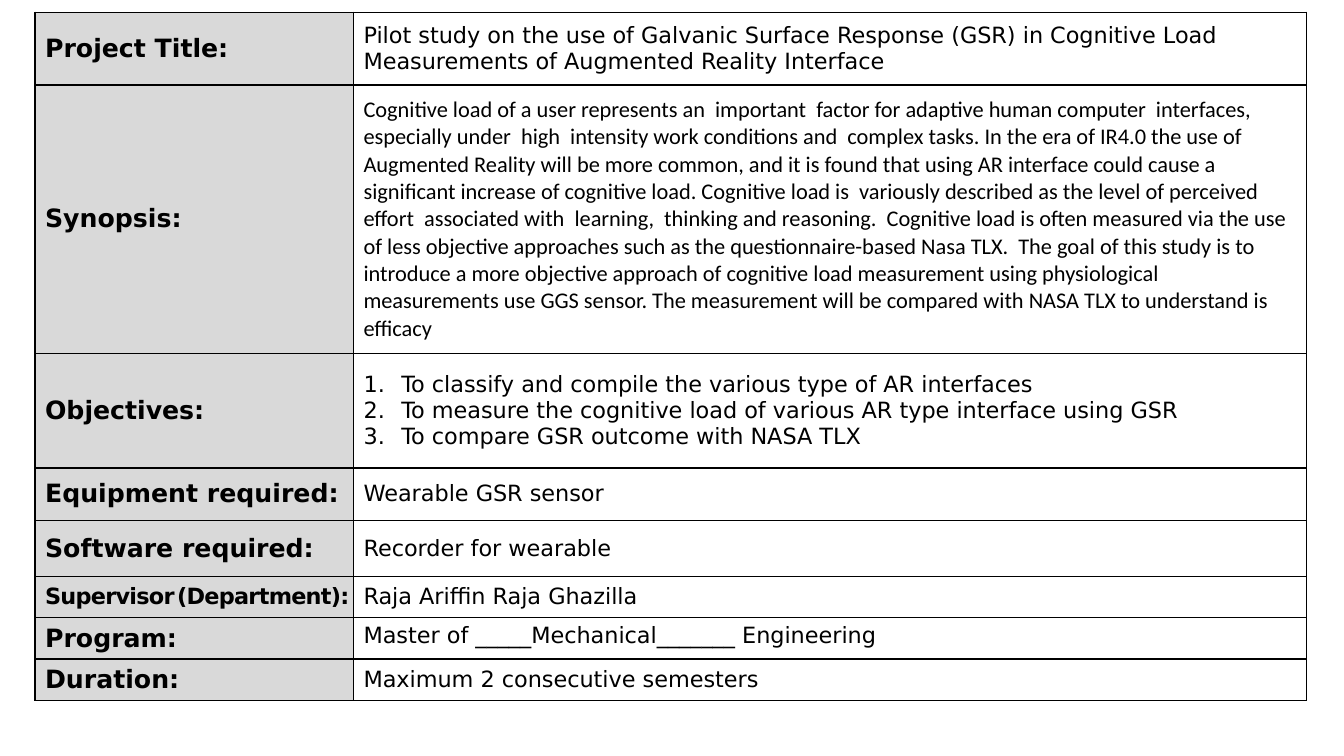
from dataclasses import dataclass

from lxml.etree import SubElement
from pptx import Presentation
from pptx.dml.color import RGBColor
from pptx.enum.text import MSO_ANCHOR
from pptx.oxml.ns import qn
from pptx.table import _Cell
from pptx.text.text import _Paragraph
from pptx.util import Pt

BLACK, GREY = "000000", "D9D9D9"
LABEL_WIDTH, DETAIL_WIDTH = 227.5, 681
INDENT = 27


@dataclass
class Field:
    label: str
    lines: list[str]
    height: float
    font: str = "DejaVu Sans"
    numbered: bool = False
    anchor: MSO_ANCHOR = MSO_ANCHOR.MIDDLE


SYNOPSIS = (
    "Cognitive load of a user represents an  important  factor for adaptive human computer  interfaces,  "
    "especially under  high  intensity work conditions and  complex tasks. In the era of IR4.0 the use of "
    "Augmented Reality will be more common, and it is found that using AR interface could cause a "
    "significant increase of cognitive load. Cognitive load is  variously described as the level of perceived  "
    "effort  associated with  learning,  thinking and reasoning.  Cognitive load is often measured via the use "
    "of less objective approaches such as the questionnaire-based Nasa TLX.  The goal of this study is to "
    "introduce a more objective approach of cognitive load measurement using physiological "
    "measurements use GGS sensor. The measurement will be compared with NASA TLX to understand is efficacy"
)

SUPERVISOR = "Supervisor (Department):"

FIELDS = [
    Field("Project Title:", [
        "Pilot study on the use of Galvanic Surface Response (GSR) in Cognitive Load "
        " Measurements of Augmented Reality Interface"], 52),
    Field("Synopsis:", [SYNOPSIS], 191.5, font="Calibri"),
    Field("Objectives:", [
        "To classify and compile the various type of AR interfaces",
        "To measure the cognitive load of various AR type interface using GSR",
        "To compare GSR outcome with NASA TLX"], 82, numbered=True),
    Field("Equipment required:", ["Wearable GSR sensor"], 37.5),
    Field("Software required:", ["Recorder for wearable"], 40),
    Field(SUPERVISOR, ["Raja Ariffin Raja Ghazilla"], 29.5),
    Field("Program:", ["Master of _____Mechanical_______ Engineering"], 29.5,
          anchor=MSO_ANCHOR.TOP),
    Field("Duration:", ["Maximum 2 consecutive semesters"], 29.5),
]


def rgb(color: str) -> RGBColor:
    return RGBColor.from_string(color)


def add_borders(cell: _Cell) -> None:
    """Outline the cell; call before filling, as lines precede the fill."""
    tcPr = cell._tc.get_or_add_tcPr()
    for side in ("a:lnL", "a:lnR", "a:lnT", "a:lnB"):
        ln = SubElement(tcPr, qn(side), w=str(Pt(1)))
        fill = SubElement(ln, qn("a:solidFill"))
        SubElement(fill, qn("a:srgbClr"), val=BLACK)


def set_font(p: _Paragraph, name: str, size: float, bold: bool = False) -> None:
    p.font.name = name
    p.font.size = Pt(size)
    p.font.bold = bold
    p.font.color.rgb = rgb(BLACK)


def number(p: _Paragraph) -> None:
    pPr = p._p.get_or_add_pPr()
    pPr.set("marL", str(Pt(INDENT)))
    pPr.set("indent", str(-Pt(INDENT)))
    bullet = pPr.makeelement(qn("a:buAutoNum"), {"type": "arabicPeriod"})
    pPr.insert(0, bullet)


def write_tight_label(cell: _Cell, text: str) -> None:
    """Fit a long label on one line with condensed runs and a narrow gap."""
    cell.margin_right = 0
    p = cell.text_frame.paragraphs[0]
    set_font(p, "DejaVu Sans", 16, bold=True)
    first, gap, last = text.partition(" ")
    for part in (first, gap, last):
        r = p.add_run()
        r.text = part
        r._r.get_or_add_rPr().set("spc", "-50")
        if part == gap:
            r.font.size = Pt(5)


def write_label(cell: _Cell, text: str) -> None:
    cell.vertical_anchor = MSO_ANCHOR.MIDDLE
    cell.fill.solid()
    cell.fill.fore_color.rgb = rgb(GREY)
    if text == SUPERVISOR:
        write_tight_label(cell, text)
    else:
        cell.text = text
        set_font(cell.text_frame.paragraphs[0], "DejaVu Sans", 18, bold=True)


def write_detail(cell: _Cell, field: Field) -> None:
    cell.vertical_anchor = field.anchor
    cell.fill.background()
    cell.text = "\n".join(field.lines)
    for p in cell.text_frame.paragraphs:
        set_font(p, field.font, 16)
        if field.numbered:
            number(p)


def main() -> None:
    prs = Presentation()
    prs.slide_width, prs.slide_height = Pt(960), Pt(540)
    s = prs.slides.add_slide(prs.slide_layouts[6])
    table = s.shapes.add_table(
        len(FIELDS), 2, Pt(25), Pt(8.8), Pt(LABEL_WIDTH + DETAIL_WIDTH),
        Pt(sum(field.height for field in FIELDS))).table
    table.first_row = table.horz_banding = False
    for column, width in zip(table.columns, (LABEL_WIDTH, DETAIL_WIDTH)):
        column.width = Pt(width)
    for row, field in zip(table.rows, FIELDS):
        row.height = Pt(field.height)
        label, detail = row.cells
        for cell in (label, detail):
            add_borders(cell)
        write_label(label, field.label)
        write_detail(detail, field)
    prs.save("out.pptx")


if __name__ == "__main__":
    main()
